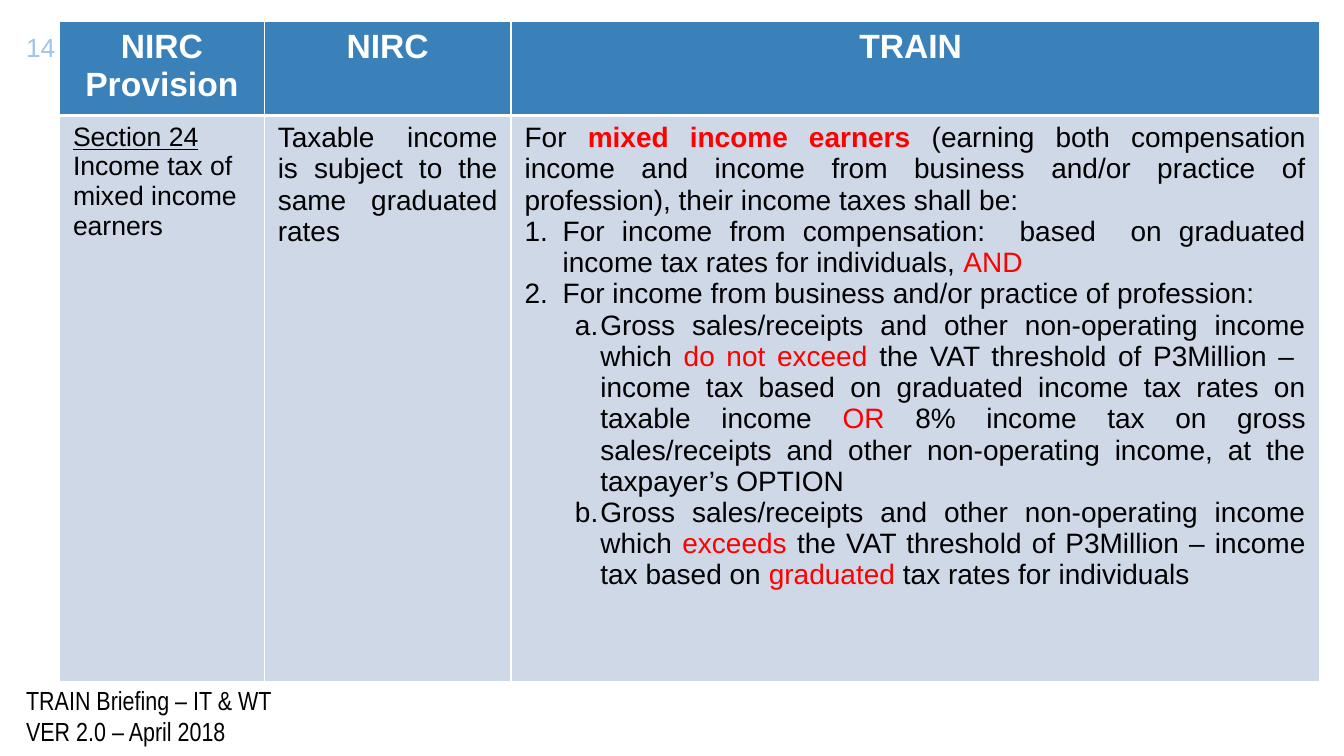
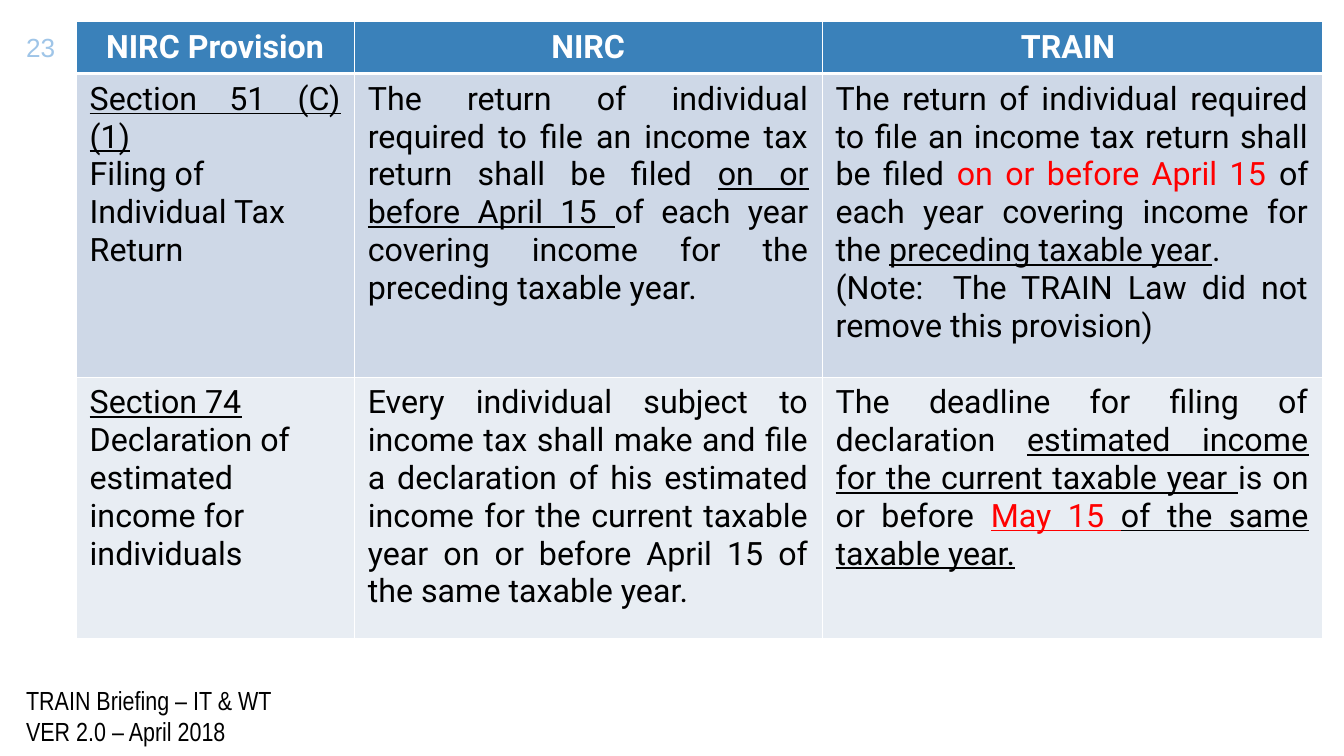
from dataclasses import dataclass
from enum import Flag, auto

from lxml import etree
from pptx import Presentation
from pptx.dml.color import RGBColor
from pptx.enum.text import MSO_AUTO_SIZE, PP_ALIGN
from pptx.oxml.ns import qn
from pptx.util import Cm, Pt

LEFT, CENTER, JUSTIFY = PP_ALIGN.LEFT, PP_ALIGN.CENTER, PP_ALIGN.JUSTIFY
FIT_SHAPE = MSO_AUTO_SIZE.SHAPE_TO_FIT_TEXT


class Mark(Flag):
    RED = auto()
    BOLD = auto()
    UNDERLINE = auto()


RED, BOLD, UNDERLINE = Mark.RED, Mark.BOLD, Mark.UNDERLINE


@dataclass(frozen=True)
class Theme:
    header_fill: str = "3A81BA"
    row_fills: tuple = ("CED8E7", "E8EDF3")
    text: str = "000000"
    header_text: str = "FFFFFF"
    border: str = "FFFFFF"
    accent: str = "FF0000"
    number: str = "9FC5E8"
    body_font: str = "Arial"
    footer_font: str = "Arial Narrow"
    small_size: float = 18.7
    border_width: float = 1
    header_border_width: float = 3


THEME = Theme()


@dataclass(frozen=True)
class Numbering:
    scheme: str
    level: int
    margin: float
    hanging: float


NUMBERS = Numbering("arabicPeriod", 0, 0.96, 0.96)
LETTERS = Numbering("alphaLcPeriod", 3, 1.91, 0.64)


@dataclass(frozen=True)
class Line:
    """A paragraph; each segment is a string or a (string, marks) pair."""
    segments: tuple
    align: PP_ALIGN = JUSTIFY
    numbering: Numbering = None


@dataclass(frozen=True)
class TableStyle:
    font: str
    header_size: float
    section_size: float
    body_size: float


def line(*segments, **options):
    return Line(segments, **options)


def section(number, title, align=JUSTIFY):
    return [line((number, UNDERLINE), align=align), line(title, align=LEFT)]


def add_numbering(paragraph, numbering):
    properties = paragraph._p.get_or_add_pPr()
    properties.set("marL", str(Cm(numbering.margin)))
    properties.set("indent", str(-Cm(numbering.hanging)))
    etree.SubElement(properties, qn("a:buAutoNum"), type=numbering.scheme)
    paragraph.level = numbering.level


def write_lines(frame, lines, font, size, color, bold=False):
    for index, content in enumerate(lines):
        paragraph = frame.add_paragraph() if index else frame.paragraphs[0]
        paragraph.alignment = content.align
        if content.numbering:
            add_numbering(paragraph, content.numbering)
        paragraph.font.name = font
        paragraph.font.size = Pt(size)
        paragraph.font.bold = bold
        paragraph.font.color.rgb = RGBColor.from_string(color)
        for segment in content.segments:
            text, marks = (segment, Mark(0)) if isinstance(segment, str) else segment
            run = paragraph.add_run()
            run.text = text
            if RED in marks:
                run.font.color.rgb = RGBColor.from_string(THEME.accent)
            if BOLD in marks:
                run.font.bold = True
            if UNDERLINE in marks:
                run.font.underline = True


def add_text_box(slide, box, lines, font, color):
    shape = slide.shapes.add_textbox(*map(Cm, box))
    shape.text_frame.word_wrap = True
    write_lines(shape.text_frame, lines, font, THEME.small_size, color)
    return shape.text_frame


def add_footer(slide, box):
    lines = [line("TRAIN Briefing – IT & WT"), line("VER 2.0 – April 2018")]
    frame = add_text_box(slide, box, lines, THEME.footer_font, THEME.text)
    frame.auto_size = FIT_SHAPE


def add_page_number(slide, box, number):
    lines = [line(str(number), align=LEFT)]
    frame = add_text_box(slide, box, lines, THEME.body_font, THEME.number)
    frame.margin_left = frame.margin_right = Cm(0.25)
    frame.margin_top = frame.margin_bottom = Cm(0.25)


def add_borders(cell, row_index):
    """Draw thin edges, with a thick rule between header and body."""
    thin, thick = THEME.border_width, THEME.header_border_width
    widths = {
        "a:lnL": thin,
        "a:lnR": thin,
        "a:lnT": thick if row_index == 1 else thin,
        "a:lnB": thick if row_index == 0 else thin,
    }
    properties = cell._tc.get_or_add_tcPr()
    for tag, width in widths.items():
        edge = etree.SubElement(properties, qn(tag), w=str(Pt(width)))
        fill = etree.SubElement(edge, qn("a:solidFill"))
        etree.SubElement(fill, qn("a:srgbClr"), val=THEME.border)


def fill_cell(cell, row_index, column_index, lines, style):
    add_borders(cell, row_index)
    cell.margin_left = cell.margin_right = Cm(0.34)
    cell.margin_top = cell.margin_bottom = Cm(0.17)
    is_header = row_index == 0
    if is_header:
        fill, color, size = THEME.header_fill, THEME.header_text, style.header_size
    else:
        fill = THEME.row_fills[(row_index - 1) % len(THEME.row_fills)]
        color = THEME.text
        size = style.body_size if column_index else style.section_size
    cell.fill.solid()
    cell.fill.fore_color.rgb = RGBColor.from_string(fill)
    write_lines(cell.text_frame, lines, style.font, size, color, is_header)


def add_comparison_table(slide, left, top, widths, heights, body, style):
    header = [[line(name, align=CENTER)]
              for name in ("NIRC Provision", "NIRC", "TRAIN ")]
    box = (left, top, sum(widths), sum(heights))
    table = slide.shapes.add_table(
        len(heights), len(widths), *map(Cm, box)).table
    table.horz_banding = False
    for column, width in zip(table.columns, widths):
        column.width = Cm(width)
    for row, height in zip(table.rows, heights):
        row.height = Cm(height)
    for row_index, row in enumerate([header, *body]):
        for column_index, lines in enumerate(row):
            cell = table.cell(row_index, column_index)
            fill_cell(cell, row_index, column_index, lines, style)


def add_comparison_slide(presentation, number, left, widths, heights, body, style):
    slide = presentation.slides.add_slide(presentation.slide_layouts[6])
    add_footer(slide, (0.41, 17.12, 7.11, 1.9))
    add_comparison_table(slide, left, 0.54, widths, heights, body, style)
    add_page_number(slide, (0.41, 0.54, 6.7, 4.65), number)


MIXED_INCOME = [[
    section("Section 24", "Income tax of mixed income earners", LEFT),
    [line("Taxable income is subject to the same graduated rates")],
    [
        line("For ", ("mixed income earners ", RED | BOLD),
             "(earning both compensation income and income from business "
             "and/or practice of profession), their income taxes shall be:"),
        line("For income from compensation:  based  on graduated income tax "
             "rates for individuals, ", ("AND", RED), numbering=NUMBERS),
        line("For income from business and/or practice of profession:",
             numbering=NUMBERS),
        line("Gross sales/receipts and other non-operating income which ",
             ("do not exceed ", RED),
             "the VAT threshold of P3Million –  income tax based on graduated "
             "income tax rates on taxable income ", ("OR", RED),
             " 8% income tax on gross sales/receipts and other non-operating "
             "income, at the taxpayer’s OPTION", numbering=LETTERS),
        line("Gross sales/receipts and other non-operating income which ",
             ("exceeds", RED),
             " the VAT threshold of P3Million – income tax based on ",
             ("graduated", RED), " tax rates for individuals",
             numbering=LETTERS),
    ],
]]

FILING = [
    [
        section("Section 51 (C) (1)", "Filing of Individual Tax Return"),
        [line("The return of individual required to file an income tax return "
              "shall be filed ", ("on or before April 15 ", UNDERLINE),
              "of each year covering income for the preceding taxable year.")],
        [
            line("The return of individual required to file an income tax "
                 "return shall be filed ", ("on or before April 15 ", RED),
                 "of each year covering income for the ",
                 ("preceding taxable year", UNDERLINE), "."),
            line("(Note:  The TRAIN Law did not remove this provision)"),
        ],
    ],
    [
        section("Section 74", "Declaration of estimated income for individuals"),
        [line("Every individual subject to income tax shall make and file a "
              "declaration of his estimated income for the current taxable "
              "year on or before April 15 of the same taxable year.")],
        [line("The deadline for filing of declaration ",
              ("estimated income for the current taxable year ", UNDERLINE),
              "is on or before ", ("May 15 ", RED | UNDERLINE),
              ("of the same taxable year.", UNDERLINE))],
    ],
]


def main():
    presentation = Presentation()
    presentation.slide_width = Cm(33.87)
    presentation.slide_height = Cm(19.05)
    add_comparison_slide(
        presentation, 14, 1.5, (5.16, 6.22, 20.37), (2.31, 14.25),
        MIXED_INCOME, TableStyle("Arial", 24, 19, 20))
    add_comparison_slide(
        presentation, 23, 1.92, (7.01, 11.79, 12.6), (1.2, 7.65, 6.6),
        FILING, TableStyle("Roboto", 23, 23, 23))
    presentation.save("out.pptx")


if __name__ == "__main__":
    main()
